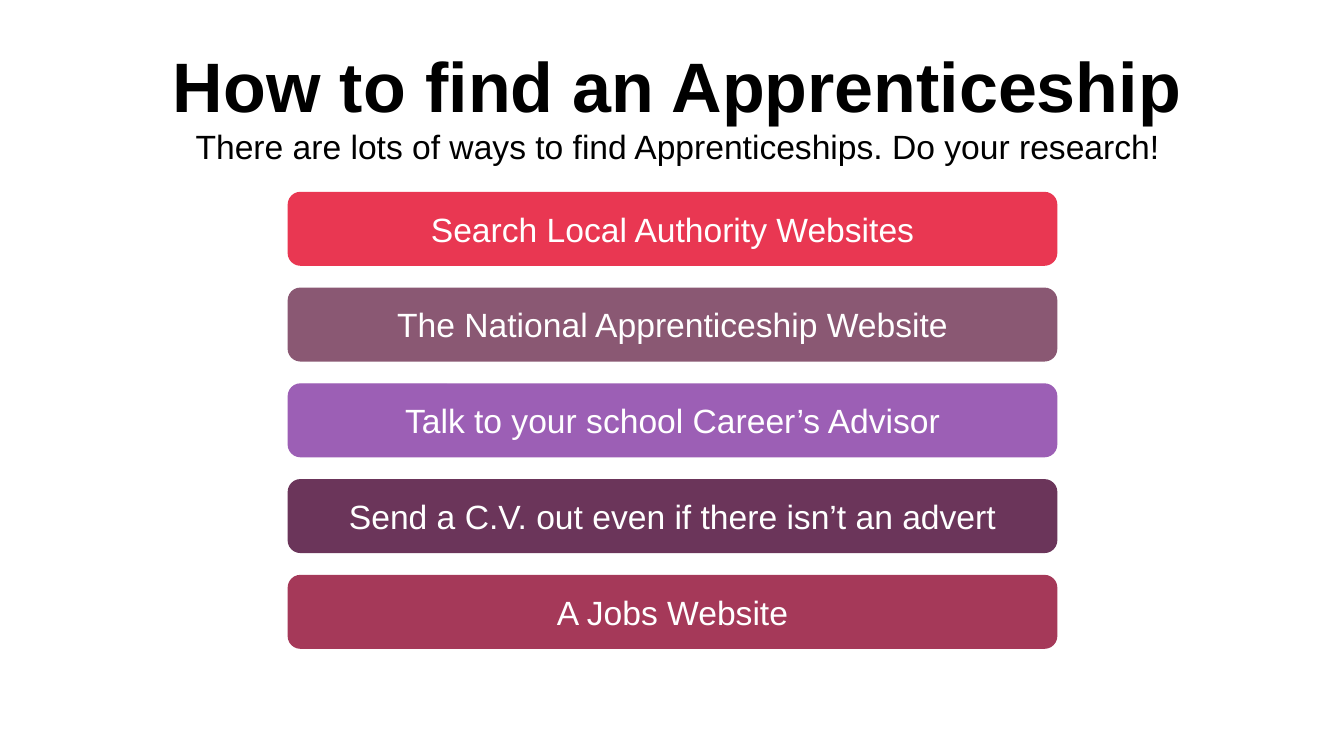
from pptx import Presentation
from pptx.dml.color import RGBColor
from pptx.enum.shapes import MSO_SHAPE
from pptx.enum.text import MSO_ANCHOR, MSO_AUTO_SIZE, PP_ALIGN
from pptx.util import Inches, Pt

HEADING = [
    ("How to find an Apprenticeship", 50, True),
    ("There are lots of ways to find Apprenticeships. Do your research!", 24, False),
]
WAYS = [
    ("Search Local Authority Websites", "E93752"),
    ("The National Apprenticeship Website", "8A5873"),
    ("Talk to your school Career’s Advisor", "9C5FB5"),
    ("Send a C.V. out even if there isn’t an advert", "6B355A"),
    ("A Jobs Website", "A53959"),
]
LEFT, TOP, WIDTH, HEIGHT, STEP = 2.86, 1.91, 7.62, 0.72, 0.95


def paint(target, color):
    target.rgb = RGBColor.from_string(color)


def write(para, text, size, color, bold=False):
    para.text = text
    para.alignment = PP_ALIGN.CENTER
    font = para.runs[0].font
    font.name = "Arial"
    font.size = Pt(size)
    font.bold = bold
    paint(font.color, color)


def add_head(slide):
    box = slide.shapes.add_textbox(Inches(0.3), Inches(0.37), Inches(12.84), Inches(1.35))
    frame = box.text_frame
    frame.word_wrap = True
    frame.auto_size = MSO_AUTO_SIZE.SHAPE_TO_FIT_TEXT
    for i, (text, size, bold) in enumerate(HEADING):
        para = frame.add_paragraph() if i else frame.paragraphs[0]
        write(para, text, size, "000000", bold)


def add_bar(slide, row, text, color):
    bar = slide.shapes.add_shape(
        MSO_SHAPE.ROUNDED_RECTANGLE,
        Inches(LEFT), Inches(TOP + row * STEP), Inches(WIDTH), Inches(HEIGHT),
    )
    bar.shadow.inherit = False
    bar.fill.solid()
    paint(bar.fill.fore_color, color)
    paint(bar.line.color, color)
    bar.line.width = Pt(1)
    frame = bar.text_frame
    frame.word_wrap = True
    frame.vertical_anchor = MSO_ANCHOR.MIDDLE
    write(frame.paragraphs[0], text, 24, "FFFFFF")


def main():
    deck = Presentation()
    deck.slide_width = Inches(13.33)
    deck.slide_height = Inches(7.5)
    slide = deck.slides.add_slide(deck.slide_layouts[6])
    add_head(slide)
    for row, (text, color) in enumerate(WAYS):
        add_bar(slide, row, text, color)
    deck.save("out.pptx")


if __name__ == "__main__":
    main()
